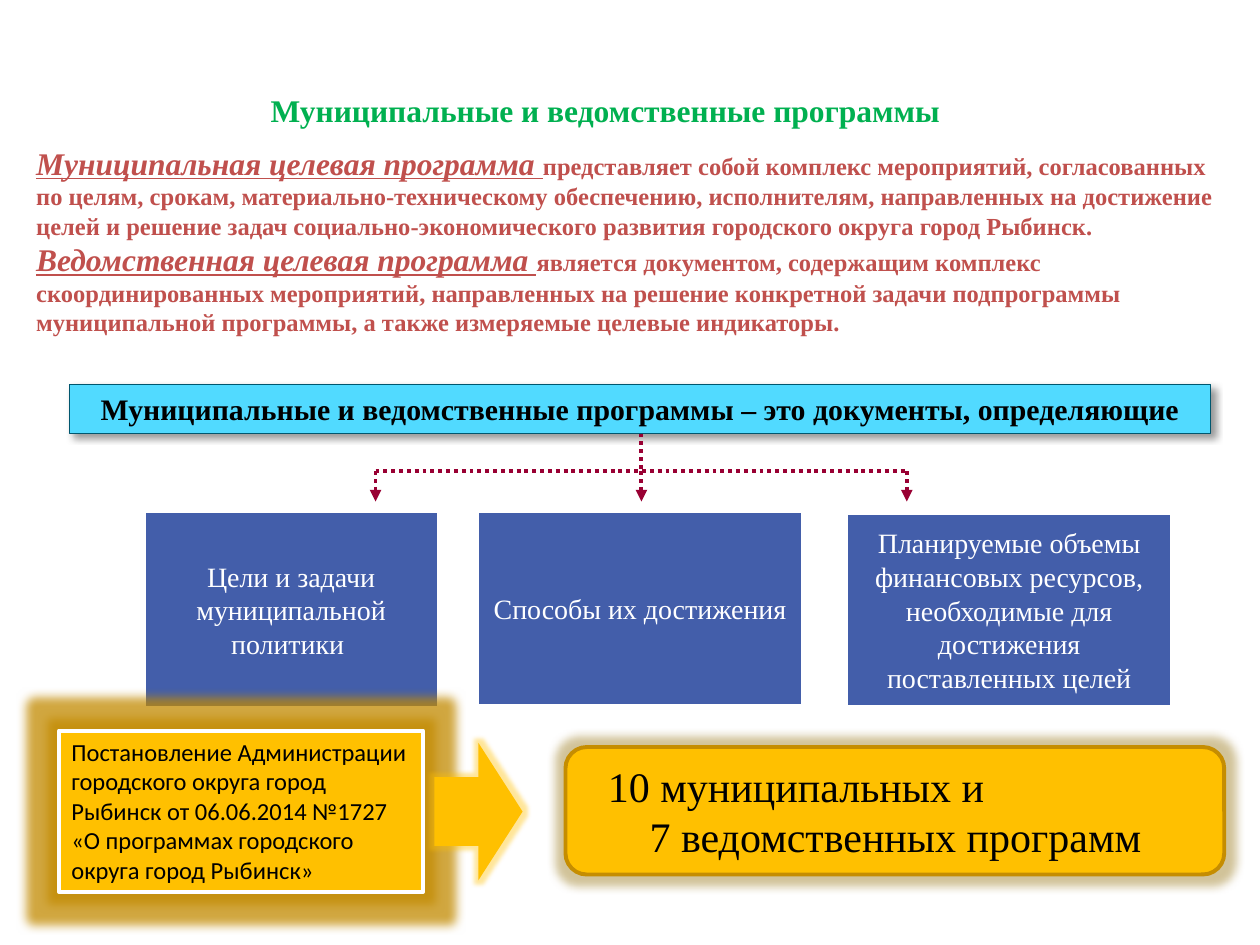
from dataclasses import dataclass
from typing import Optional

from lxml.etree import SubElement
from pptx import Presentation
from pptx.dml.color import RGBColor
from pptx.enum.dml import MSO_LINE
from pptx.enum.shapes import MSO_CONNECTOR, MSO_SHAPE
from pptx.enum.text import MSO_ANCHOR, PP_ALIGN
from pptx.oxml.ns import qn
from pptx.util import Cm, Pt

COLORS = {
    "white": "FFFFFF", "black": "000000", "green": "00B050", "red": "C0504D",
    "cyan": "51DAFF", "teal": "00566E", "crimson": "990033", "blue": "435EAA",
    "gold": "FFC000", "bronze": "C58D01", "ochre": "C28A00", "tan": "8E6A00",
}
SERIF = "Times New Roman"


@dataclass
class Glow:
    color: str
    radius: float
    opacity: int


@dataclass
class Block:
    left: float
    top: float
    width: float
    height: float
    fill: str
    lines: tuple = ()
    line: Optional[str] = None
    line_width: float = 0
    size: int = 16
    font: str = SERIF
    color: str = "black"
    bold: bool = False
    align: PP_ALIGN = PP_ALIGN.CENTER
    anchor: MSO_ANCHOR = MSO_ANCHOR.MIDDLE
    indents: tuple = (0,)
    kind: MSO_SHAPE = MSO_SHAPE.RECTANGLE
    rotation: int = 0
    glow: Optional[Glow] = None


@dataclass
class Definition:
    term: str
    meaning: str


def rgb(name: str) -> RGBColor:
    return RGBColor.from_string(COLORS[name])


def format_run(run, size: int, font: str, color: str, bold: bool = False) -> None:
    run.font.size = Pt(size)
    run.font.name = font
    run.font.bold = bold
    run.font.color.rgb = rgb(color)


def add_effect(shape, tag: str, color: str, opacity: int, **attributes) -> None:
    effects = shape._element.spPr.find(qn("a:effectLst"))
    values = {key: str(value) for key, value in attributes.items()}
    effect = SubElement(effects, qn(tag), values)
    tint = SubElement(effect, qn("a:srgbClr"), val=COLORS[color])
    SubElement(tint, qn("a:alpha"), val=str(opacity * 1000))


def add_block(slide, block: Block):
    shape = slide.shapes.add_shape(
        block.kind, Cm(block.left), Cm(block.top), Cm(block.width), Cm(block.height))
    shape.rotation = block.rotation
    shape.shadow.inherit = False
    shape.fill.solid()
    shape.fill.fore_color.rgb = rgb(block.fill)
    if block.line:
        shape.line.color.rgb = rgb(block.line)
        shape.line.width = Pt(block.line_width)
    else:
        shape.line.fill.background()
    if block.glow:
        add_effect(shape, "a:glow", block.glow.color, block.glow.opacity,
                   rad=Pt(block.glow.radius))
    if block.lines:
        text_frame = shape.text_frame
        text_frame.word_wrap = True
        text_frame.vertical_anchor = block.anchor
        text_frame.text = "\n".join(block.lines)
        for paragraph, indent in zip(text_frame.paragraphs, block.indents):
            paragraph.alignment = block.align
            if indent:
                paragraph._p.get_or_add_pPr().set("marL", str(Cm(indent)))
            for run in paragraph.runs:
                format_run(run, block.size, block.font, block.color, block.bold)
    return shape


def add_dotted_line(slide, start: tuple, end: tuple, arrow: bool = False) -> None:
    connector = slide.shapes.add_connector(
        MSO_CONNECTOR.STRAIGHT, *(Cm(value) for value in start + end))
    connector.line.color.rgb = rgb("crimson")
    connector.line.width = Pt(2.25)
    connector.line.dash_style = MSO_LINE.ROUND_DOT
    properties = connector._element.spPr
    if arrow:
        SubElement(properties.find(qn("a:ln")), qn("a:tailEnd"), type="triangle")
    SubElement(properties, qn("a:effectLst"))


def add_title(slide, text: str) -> None:
    title = slide.shapes.title
    title.left, title.top = Cm(4.37), Cm(1.7)
    title.width, title.height = Cm(15.67), Cm(1.02)
    title.text_frame.text = text
    title.text_frame.vertical_anchor = MSO_ANCHOR.MIDDLE
    paragraph = title.text_frame.paragraphs[0]
    paragraph.alignment = PP_ALIGN.CENTER
    format_run(paragraph.runs[0], 18, SERIF, "green", True)


def add_definitions(slide, definitions: list[Definition]) -> None:
    box = slide.shapes.add_textbox(Cm(0.48), Cm(2.77), Cm(24.43), Cm(4.19))
    text_frame = box.text_frame
    text_frame.word_wrap = True
    for index, definition in enumerate(definitions):
        paragraph = text_frame.add_paragraph() if index else text_frame.paragraphs[0]
        term = paragraph.add_run()
        term.text = definition.term + " "
        format_run(term, 18, SERIF, "red", True)
        term.font.italic = term.font.underline = True
        meaning = paragraph.add_run()
        meaning.text = definition.meaning
        format_run(meaning, 14, SERIF, "red", True)


DEFINITIONS = [
    Definition("Муниципальная целевая программа",
               "представляет собой комплекс мероприятий, согласованных по целям, срокам, "
               "материально-техническому обеспечению, исполнителям, направленных на "
               "достижение целей и решение задач социально-экономического развития "
               "городского округа город Рыбинск."),
    Definition("Ведомственная целевая программа",
               "является документом, содержащим комплекс скоординированных мероприятий, "
               "направленных на решение конкретной задачи подпрограммы муниципальной "
               "программы, а также измеряемые целевые индикаторы."),
]
BANNER = Block(
    1.4, 7.75, 23.01, 0.99, "cyan",
    ("Муниципальные и ведомственные программы – это документы, определяющие",),
    "teal", 0.75, size=17, bold=True)
SUBJECTS = [
    (2.9, 10.31, 5.94, 3.96, "Цели и задачи муниципальной политики "),
    (9.63, 10.31, 6.55, 3.91, "Способы их достижения"),
    (17.07, 10.34, 6.55, 3.91, "Планируемые объемы финансовых ресурсов, необходимые "
                               "для достижения поставленных целей"),
]
RESULT_BLOCKS = [
    Block(11.4, 15.06, 13.28, 2.57, "gold",
          ("10 муниципальных и", "7 ведомственных программ"), "bronze", 2.25, size=24,
          align=PP_ALIGN.LEFT, indents=(0.48, 1.32), kind=MSO_SHAPE.ROUNDED_RECTANGLE,
          glow=Glow("tan", 11, 40)),
    Block(1.19, 14.73, 7.34, 3.25, "gold",
          ("Постановление Администрации городского округа город Рыбинск от 06.06.2014 "
           "№1727 «О программах городского округа город Рыбинск»",),
          "white", 2.25, size=14, font="Calibri", align=PP_ALIGN.LEFT,
          anchor=MSO_ANCHOR.TOP, glow=Glow("ochre", 12, 75)),
    Block(8.26, 15.47, 2.77, 1.78, "gold", kind=MSO_SHAPE.DOWN_ARROW, rotation=270,
          glow=Glow("gold", 5, 40)),
]
BRANCH_X = (7.57, 12.93, 18.28)
STEM_TOP, BRANCH_TOP, BRANCH_BOTTOM = 8.74, 9.5, 10.11


def main() -> None:
    presentation = Presentation()
    presentation.slide_width, presentation.slide_height = Cm(25.4), Cm(19.05)
    slide = presentation.slides.add_slide(presentation.slide_layouts[5])
    add_title(slide, "Муниципальные и ведомственные программы")
    banner = add_block(slide, BANNER)
    add_effect(banner, "a:outerShdw", "black", 40,
               blurRad=Pt(4), dist=Pt(3), dir=45 * 60000)
    add_dotted_line(slide, (BRANCH_X[0], BRANCH_TOP), (BRANCH_X[-1], BRANCH_TOP))
    add_dotted_line(slide, (BRANCH_X[1], STEM_TOP), (BRANCH_X[1], BRANCH_TOP))
    for x in BRANCH_X:
        add_dotted_line(slide, (x, BRANCH_TOP), (x, BRANCH_BOTTOM), arrow=True)
    for *place, text in SUBJECTS:
        add_block(slide, Block(*place, "blue", (text,), "white", 2, color="white"))
    for block in RESULT_BLOCKS:
        add_block(slide, block)
    add_definitions(slide, DEFINITIONS)
    presentation.save("out.pptx")


if __name__ == "__main__":
    main()
